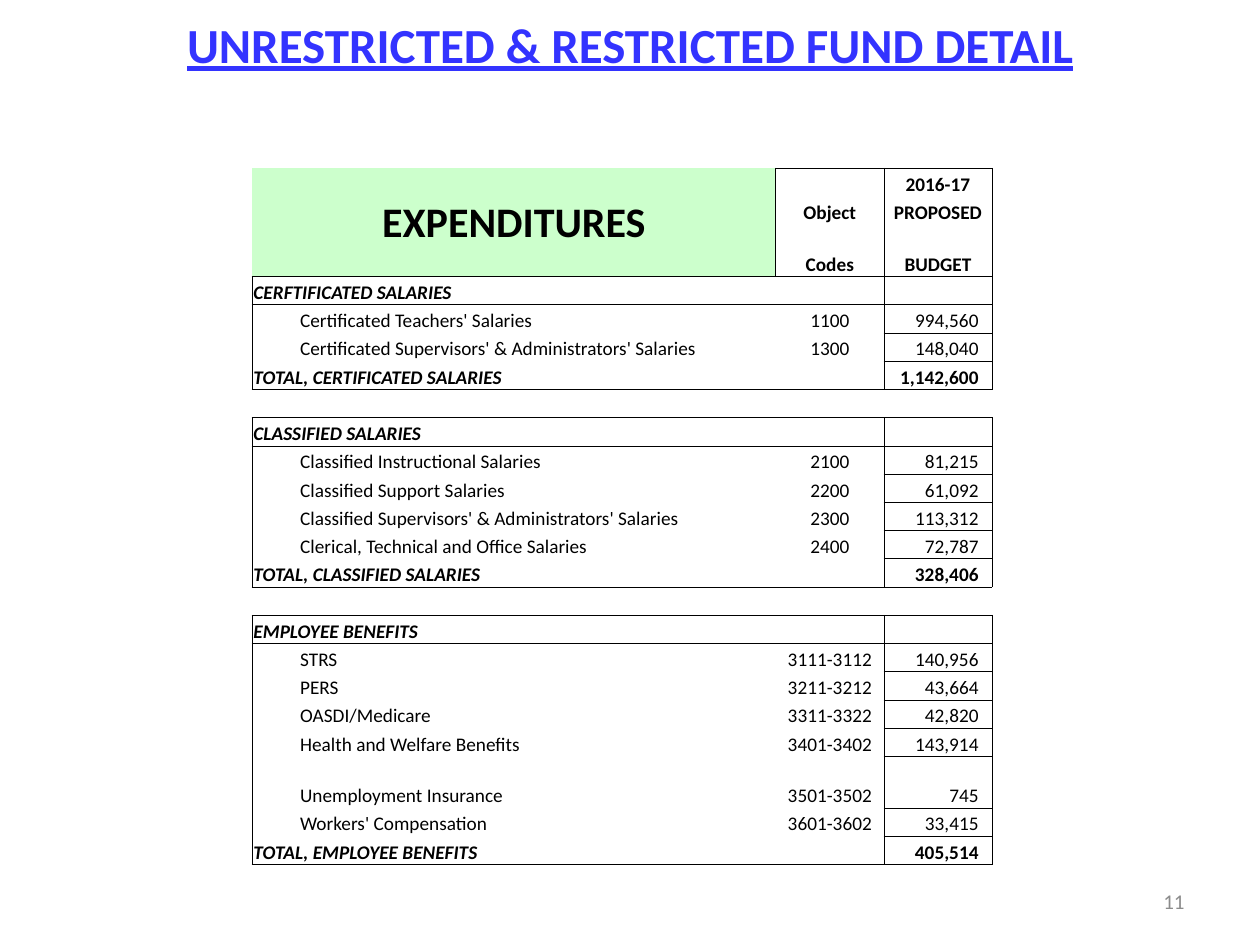
from typing import NamedTuple

from lxml.etree import SubElement
from pptx import Presentation
from pptx.dml.color import RGBColor
from pptx.enum.text import MSO_ANCHOR as Anchor, PP_ALIGN as Align
from pptx.oxml.ns import qn
from pptx.util import Cm, Pt

FONT = "Calibri"
BLACK, BLUE, GREY, GREEN = "000000", "3333FF", "8C8C8C", "CCFFCC"
PLAIN = "{2D5ABB26-0587-4C30-8999-92F81FD0307C}"  # no style, no grid
WIDTHS = (0.94, 9.62, 2.18, 2.18)
ROW, TALL = 0.57, 1.04
PAD, EDGE = 0.03, 0.27


class Item(NamedTuple):
    label: str
    code: str
    amount: str
    height: float = ROW


class Group(NamedTuple):
    name: str
    items: list[Item]
    total: str


HEAD = [("", "2016-17"), ("Object", "PROPOSED"), ("Codes", "BUDGET")]
GROUPS = [
    Group("CERFTIFICATED SALARIES", [
        Item("Certificated Teachers' Salaries", "1100", "994,560"),
        Item("Certificated Supervisors' & Administrators' Salaries", "1300", "148,040"),
    ], "1,142,600"),
    Group("CLASSIFIED SALARIES", [
        Item("Classified Instructional Salaries", "2100", "81,215"),
        Item("Classified Support Salaries", "2200", "61,092"),
        Item("Classified Supervisors' & Administrators' Salaries", "2300", "113,312"),
        Item("Clerical, Technical and Office Salaries", "2400", "72,787"),
    ], "328,406"),
    Group("EMPLOYEE BENEFITS", [
        Item("STRS", "3111-3112", "140,956"),
        Item("PERS", "3211-3212", "43,664"),
        Item("OASDI/Medicare", "3311-3322", "42,820"),
        Item("Health and Welfare Benefits", "3401-3402", "143,914"),
        Item("Unemployment Insurance", "3501-3502", "745", TALL),
        Item("Workers' Compensation", "3601-3602", "33,415"),
    ], "405,514"),
]


def color(code: str) -> RGBColor:
    return RGBColor.from_string(code)


def write(frame, text: str, size: int, align=Align.LEFT, tint=BLACK,
          bold=False, ital=False, under=False) -> None:
    frame.text = text
    para = frame.paragraphs[0]
    para.alignment = align
    for run in para.runs:
        font = run.font
        font.name, font.size, font.color.rgb = FONT, Pt(size), color(tint)
        font.bold, font.italic, font.underline = bold, ital, under


def add_text(slide, box: tuple, anchor, text: str, size: int, **style) -> None:
    frame = slide.shapes.add_textbox(*map(Cm, box)).text_frame
    frame.word_wrap = True
    frame.vertical_anchor = anchor
    write(frame, text, size, **style)


def rule(cell, sides: str) -> None:
    """Draw thin lines on the given sides of a cell."""
    props = cell._tc.get_or_add_tcPr()
    for side in "LRTB":
        if side in sides:
            line = SubElement(props, qn(f"a:ln{side}"), w=str(Pt(0.5)))
            fill = SubElement(line, qn("a:solidFill"))
            SubElement(fill, qn("a:srgbClr"), val=BLACK)


def put(cell, text="", sides="", size=11, fill="", edge=PAD,
        anchor=Anchor.BOTTOM, **style) -> None:
    write(cell.text_frame, text, size, **style)
    if not text:  # keeps an empty cell from stretching its row
        end = cell.text_frame.paragraphs[0]._p.get_or_add_endParaRPr()
        end.set("sz", str(size * 100))
    cell.margin_left = cell.margin_top = Cm(PAD)
    cell.margin_right, cell.margin_bottom = Cm(edge), 0
    cell.vertical_anchor = anchor
    rule(cell, sides)
    if fill:
        cell.fill.solid()
        cell.fill.fore_color.rgb = color(fill)
    else:
        cell.fill.background()


def put_sum(cell, text="", bold=False) -> None:
    put(cell, text, "LRTB", edge=EDGE, align=Align.RIGHT, bold=bold)


def put_band(grid, row: int, text: str, side: str, total="") -> None:
    """Fill the heading or total row of a group."""
    first, mate = grid.cell(row, 0), grid.cell(row, 1)
    first.merge(mate)
    put(first, text, "L" + side, bold=True, ital=True)
    put(mate, sides=side)
    put(grid.cell(row, 2), sides="R" + side)
    put_sum(grid.cell(row, 3), total, bold=True)


def put_item(grid, row: int, item: Item) -> None:
    grid.rows[row].height = Cm(item.height)
    put(grid.cell(row, 0), sides="L")
    put(grid.cell(row, 1), item.label)
    put(grid.cell(row, 2), item.code, "R", align=Align.CENTER)
    put_sum(grid.cell(row, 3), item.amount)


def put_head(grid) -> None:
    for row, texts in enumerate(HEAD):
        sides = "LR" + ("T", "", "B")[row]
        for col, text in enumerate(texts, 2):
            put(grid.cell(row, col), text, sides, align=Align.CENTER, bold=True)
        for col in range(2):
            put(grid.cell(row, col))
    first = grid.cell(0, 0)
    first.merge(grid.cell(2, 1))
    put(first, "EXPENDITURES", "RB", 24, GREEN, anchor=Anchor.MIDDLE,
        align=Align.CENTER, bold=True)


def add_grid(slide) -> None:
    count = len(HEAD) + sum(len(g.items) + 3 for g in GROUPS) - 1
    frame = slide.shapes.add_table(count, len(WIDTHS), Cm(5.08), Cm(3.39),
                                   Cm(sum(WIDTHS)), Cm(ROW * (count - 1) + TALL))
    grid = frame.table
    grid.first_row = grid.horz_banding = False
    frame._element.find(".//" + qn("a:tableStyleId")).text = PLAIN
    for col, width in zip(grid.columns, WIDTHS):
        col.width = Cm(width)
    for line in grid.rows:
        line.height = Cm(ROW)

    put_head(grid)
    row = len(HEAD)
    for group in GROUPS:
        if row > len(HEAD):  # gap between groups
            for col in range(len(WIDTHS)):
                put(grid.cell(row, col), sides="TB")
            row += 1
        put_band(grid, row, group.name, "T")
        for row, item in enumerate(group.items, row + 1):
            put_item(grid, row, item)
        row += 1
        name = group.name.replace("CERFT", "CERT")
        put_band(grid, row, f"TOTAL, {name}", "B", group.total)
        row += 1


def main() -> None:
    deck = Presentation()
    deck.slide_width, deck.slide_height = Cm(25.4), Cm(19.05)
    slide = deck.slides.add_slide(deck.slide_layouts[6])

    # Slide number and title
    add_text(slide, (18.2, 17.66, 5.93, 1.01), Anchor.MIDDLE, "11", 12,
             align=Align.RIGHT, tint=GREY)
    add_text(slide, (0, -0.64, 25.4, 2.24), Anchor.BOTTOM,
             "UNRESTRICTED & RESTRICTED FUND DETAIL", 28,
             align=Align.CENTER, tint=BLUE, bold=True, under=True)

    # Budget table
    add_grid(slide)
    deck.save("out.pptx")


if __name__ == "__main__":
    main()
